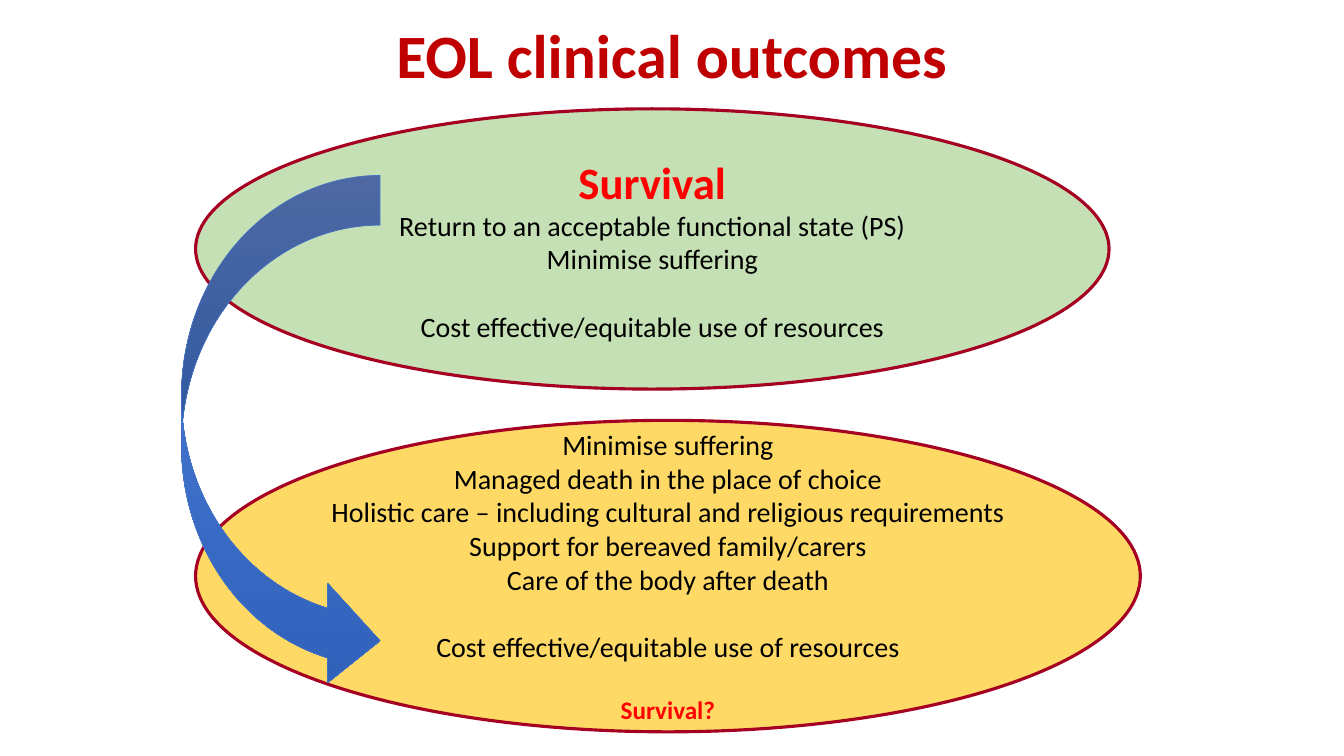
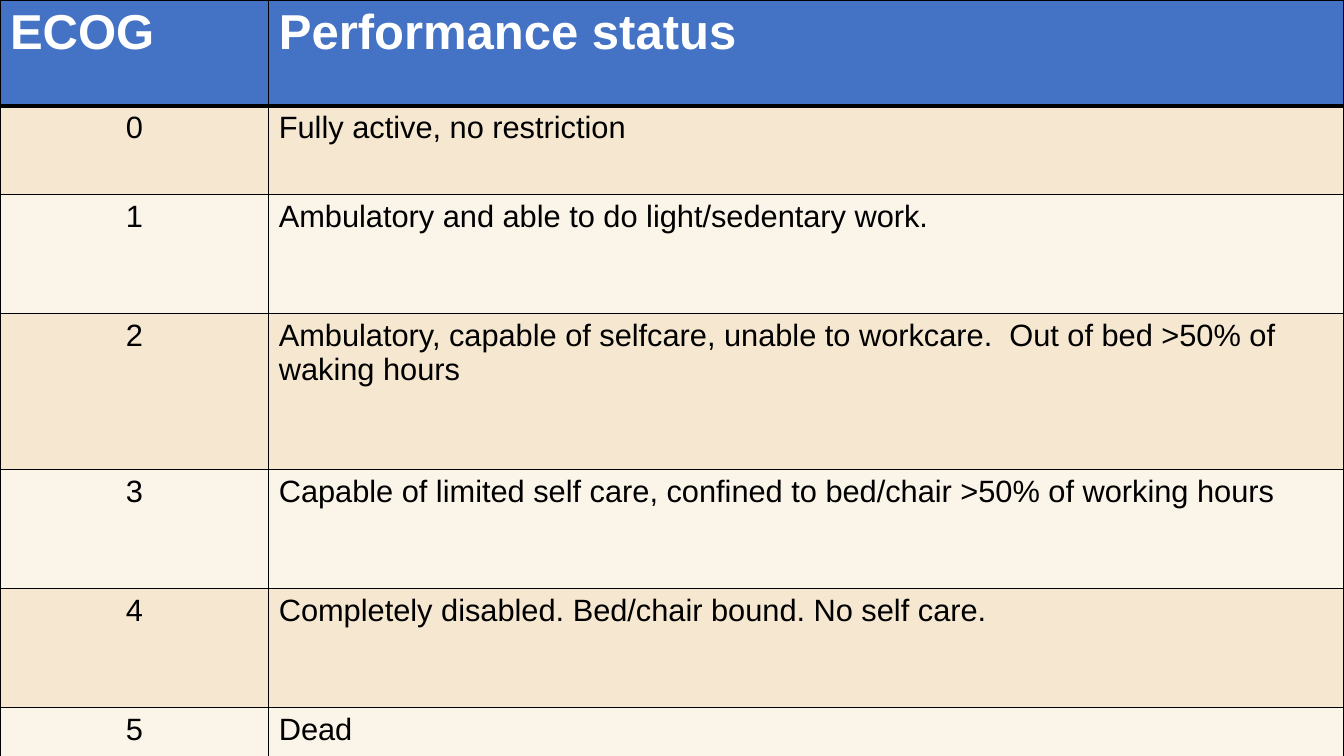
from copy import deepcopy
from dataclasses import dataclass

from lxml import etree
from pptx import Presentation
from pptx import util as u
from pptx.dml.color import RGBColor
from pptx.enum import shapes, text
from pptx.oxml.ns import qn


@dataclass(frozen=True)
class Theme:
    title: str = "C00000"
    alert: str = "FF0000"
    ink: str = "000000"
    paper: str = "FFFFFF"
    outline: str = "A50021"
    survival: str = "C5E0B4"
    dying: str = "FFD966"
    accent: str = "4472C4"
    arrow: tuple = ("6183CB", "3E70CA", "3062BB")
    bands: tuple = ("F6E7D0", "FBF4E9")
    slide_font: str = "Calibri"
    table_font: str = "Arial"
    title_size: int = 44
    lead_size: int = 32
    body_size: int = 20
    note_size: int = 18
    head_size: int = 35
    cell_size: int = 22


THEME = Theme()
WIDTH, HEIGHT = 13.33, 7.5
CENTER, LEFT = text.PP_ALIGN.CENTER, text.PP_ALIGN.LEFT

TITLE = "EOL clinical outcomes"
LEAD = dict(size=THEME.lead_size, color=THEME.alert, bold=True)
NOTE = dict(size=THEME.note_size, color=THEME.alert, bold=True, before=22)
NEW_GROUP = dict(before=24.4)

# Each outcome: box, fill, lines with their departures from body text
OUTCOMES = [
    ((1.94, 1.08, 9.06, 2.78), THEME.survival, [
        ("Survival", LEAD),
        ("Return to an acceptable functional state (PS)", {}),
        ("Minimise suffering", {}),
        ("Cost effective/equitable use of resources", NEW_GROUP),
    ]),
    ((1.94, 4.17, 9.37, 3.09), THEME.dying, [
        ("Minimise suffering", {}),
        ("Managed death in the place of choice", {}),
        ("Holistic care – including cultural and religious requirements", {}),
        ("Support for bereaved family/carers", {}),
        ("Care of the body after death", {}),
        ("Cost effective/equitable use of resources", NEW_GROUP),
        ("Survival?", NOTE),
    ]),
]
ARROW_BOX = (1.8, 1.74, 1.97, 5.11)
ARROW_BENDS = (0.25, 0.5, 0.263)

ECOG_HEAD = ("ECOG", "Performance status")
ECOG_GRADES = [
    "Fully active, no restriction",
    "Ambulatory and able to do light/sedentary work.",
    "Ambulatory, capable of selfcare, unable to workcare.  Out of bed >50% of waking hours",
    "Capable of limited self care, confined to bed/chair >50% of working hours",
    "Completely disabled. Bed/chair bound. No self care.",
    "Dead",
]
COLUMN_SHARES = (0.2, 0.8)
ROW_HEIGHTS = (1.05, 0.88, 1.18, 1.55, 1.18, 1.18, 0.49)


def rgb(code):
    return RGBColor.from_string(code)


def inches(box):
    return [u.Inches(length) for length in box]


def write(frame, words, size=THEME.body_size, color=THEME.ink, bold=False,
          font=THEME.slide_font, align=CENTER, before=0, spacing=1.0):
    """Fill the frame's first paragraph, or add one if it is taken."""
    paragraph = frame.paragraphs[-1]
    if paragraph.runs:
        paragraph = frame.add_paragraph()
    paragraph.alignment = align
    paragraph.space_before = u.Pt(before)
    paragraph.line_spacing = spacing
    run = paragraph.add_run()
    run.text = words
    run.font.name, run.font.size, run.font.bold = font, u.Pt(size), bold
    run.font.color.rgb = rgb(color)


def add_title(slide, words):
    title = slide.shapes.title
    title.left, title.top, title.width, title.height = inches((0, 0.2, WIDTH, 0.88))
    frame = title.text_frame
    frame.auto_size = text.MSO_AUTO_SIZE.NONE
    frame.vertical_anchor = text.MSO_ANCHOR.TOP
    write(frame, words, size=THEME.title_size, color=THEME.title, bold=True, spacing=0.9)


def add_outlined(slide, kind, box, line_color, line_width):
    shape = slide.shapes.add_shape(kind, *inches(box))
    shape.shadow.inherit = False
    shape.line.color.rgb = rgb(line_color)
    shape.line.width = u.Pt(line_width)
    return shape


def add_outcome(slide, box, fill, lines):
    oval = add_outlined(slide, shapes.MSO_SHAPE.OVAL, box, THEME.outline, 2.25)
    oval.fill.solid()
    oval.fill.fore_color.rgb = rgb(fill)
    frame = oval.text_frame
    frame.word_wrap = False
    frame.vertical_anchor = text.MSO_ANCHOR.MIDDLE
    for words, look in lines:
        write(frame, words, **look)


def add_transition_arrow(slide):
    arrow = add_outlined(slide, shapes.MSO_SHAPE.CURVED_RIGHT_ARROW, ARROW_BOX,
                         THEME.accent, 0.5)
    for index, bend in enumerate(ARROW_BENDS):
        arrow.adjustments[index] = bend
    arrow.fill.gradient()
    arrow.fill.gradient_angle = 270
    stop_list = next(arrow.element.iter(qn("a:gsLst")))
    stop_list.insert(1, deepcopy(stop_list[0]))
    for index, (stop, color) in enumerate(zip(arrow.fill.gradient_stops, THEME.arrow)):
        stop.position = index / (len(THEME.arrow) - 1)
        stop.color.rgb = rgb(color)


def set_borders(cell, **widths):
    """Draw the cell's edges (L, R, T, B) in ink, widths in points."""
    properties = cell._tc.get_or_add_tcPr()
    for index, (edge, width) in enumerate(widths.items()):
        line = etree.Element(qn(f"a:ln{edge}"), w=str(u.Pt(width)))
        fill = etree.SubElement(line, qn("a:solidFill"))
        etree.SubElement(fill, qn("a:srgbClr"), val=THEME.ink)
        properties.insert(index, line)


def add_ecog_table(slide):
    rows = [ECOG_HEAD] + [(str(grade), words) for grade, words in enumerate(ECOG_GRADES)]
    table = slide.shapes.add_table(len(rows), len(ECOG_HEAD),
                                   *inches((0, 0, WIDTH, HEIGHT))).table
    table.first_row = table.horz_banding = False
    for column, share in zip(table.columns, COLUMN_SHARES):
        column.width = u.Inches(WIDTH * share)
    for r, (row, height, entries) in enumerate(zip(table.rows, ROW_HEIGHTS, rows)):
        row.height = u.Inches(height)
        for c, (cell, words) in enumerate(zip(row.cells, entries)):
            if r == 0:
                fill = THEME.accent
                look = dict(size=THEME.head_size, color=THEME.paper, bold=True, align=LEFT)
            else:
                fill = THEME.bands[(r - 1) % 2]
                look = dict(size=THEME.cell_size, align=LEFT if c else CENTER)
            cell.fill.solid()
            cell.fill.fore_color.rgb = rgb(fill)
            write(cell.text_frame, words, font=THEME.table_font, **look)
            set_borders(cell, L=1, R=1, T=3 if r == 1 else 1, B=3 if r == 0 else 1)


def main():
    deck = Presentation()
    deck.slide_width, deck.slide_height = inches((WIDTH, HEIGHT))
    title_only, blank = deck.slide_layouts[5], deck.slide_layouts[6]

    outcomes = deck.slides.add_slide(title_only)
    add_title(outcomes, TITLE)
    for outcome in OUTCOMES:
        add_outcome(outcomes, *outcome)
    add_transition_arrow(outcomes)

    add_ecog_table(deck.slides.add_slide(blank))
    deck.save("out.pptx")


if __name__ == "__main__":
    main()
